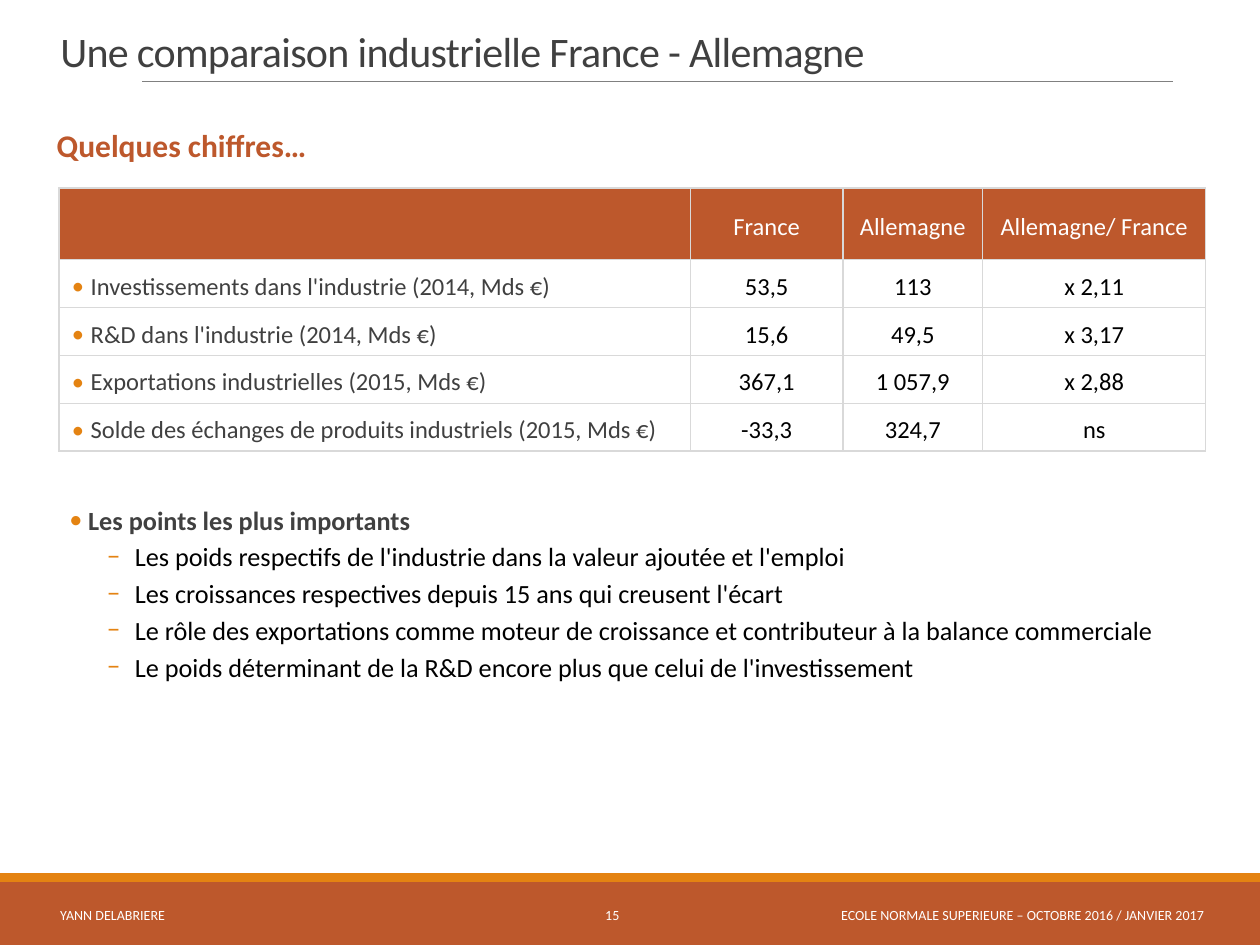
from dataclasses import dataclass

from lxml import etree
from pptx import Presentation
from pptx.dml.color import RGBColor
from pptx.enum.shapes import MSO_CONNECTOR, MSO_SHAPE
from pptx.enum.text import MSO_ANCHOR, PP_ALIGN
from pptx.oxml.ns import qn
from pptx.util import Inches, Pt

LEFT, CENTER, RIGHT = PP_ALIGN.LEFT, PP_ALIGN.CENTER, PP_ALIGN.RIGHT
TOP, MIDDLE, BOTTOM = MSO_ANCHOR.TOP, MSO_ANCHOR.MIDDLE, MSO_ANCHOR.BOTTOM
RUST, ORANGE, GREY, DARK = "BD582C", "E48312", "D9D9D9", "404040"
WHITE, BLACK, RULE = "FFFFFF", "000000", "808080"


@dataclass
class Line:
    text: str
    size: float
    color: str
    bold: bool = False
    align: PP_ALIGN = LEFT
    bullet: str = ""
    margin: float = 0
    hanging: float = 0
    before: float = 0
    spacing: float = 1.0


@dataclass
class Band:
    top: float
    height: float
    color: str


@dataclass
class Footer:
    text: str
    left: float
    width: float
    align: PP_ALIGN


def rgb(color: str) -> RGBColor:
    return RGBColor.from_string(color)


def write_line(para, line: Line) -> None:
    para.text = line.text
    para.alignment = line.align
    para.line_spacing = line.spacing
    para.space_before = Pt(line.before)
    properties = para._p.get_or_add_pPr()
    properties.set("marL", str(Inches(line.margin)))
    properties.set("indent", str(-Inches(line.hanging)))
    if line.bullet:
        bullet_color = etree.SubElement(properties, qn("a:buClr"))
        etree.SubElement(bullet_color, qn("a:srgbClr"), val=ORANGE)
        etree.SubElement(properties, qn("a:buFont"), typeface="Calibri")
        etree.SubElement(properties, qn("a:buChar"), char=line.bullet)
    for span in para.runs:
        span.font.name = "Calibri"
        span.font.size = Pt(line.size)
        span.font.bold = line.bold
        span.font.color.rgb = rgb(line.color)


def add_text(page, left: float, top: float, width: float, height: float,
             lines: list[Line], anchor: MSO_ANCHOR = TOP, inset: float = 0.1):
    box = page.shapes.add_textbox(Inches(left), Inches(top), Inches(width), Inches(height))
    frame = box.text_frame
    frame.word_wrap = True
    frame.vertical_anchor = anchor
    frame.margin_left = frame.margin_right = Inches(inset)
    for index, line in enumerate(lines):
        write_line(frame.add_paragraph() if index else frame.paragraphs[0], line)
    return box


def add_band(page, band: Band) -> None:
    shape = page.shapes.add_shape(MSO_SHAPE.RECTANGLE, 0, Inches(band.top),
                                  Inches(10), Inches(band.height))
    shape.shadow.inherit = False
    shape.fill.solid()
    shape.fill.fore_color.rgb = rgb(band.color)
    shape.line.fill.background()


def add_rule(page, left: float, right: float, top: float) -> None:
    rule = page.shapes.add_connector(MSO_CONNECTOR.STRAIGHT, Inches(left), Inches(top),
                                     Inches(right), Inches(top))
    rule.line.color.rgb = rgb(RULE)
    rule.line.width = Pt(0.5)
    etree.SubElement(rule._element.spPr, qn("a:effectLst"))


def style_cell(cell, fill: str) -> None:
    cell.vertical_anchor = MIDDLE
    properties = cell._tc.get_or_add_tcPr()
    for side in ("lnL", "lnR", "lnT", "lnB"):
        border = etree.SubElement(properties, qn(f"a:{side}"), w=str(Pt(1)))
        solid = etree.SubElement(border, qn("a:solidFill"))
        etree.SubElement(solid, qn("a:srgbClr"), val=GREY)
    cell.fill.solid()
    cell.fill.fore_color.rgb = rgb(fill)


def add_figures(page, rows: list[tuple[str, ...]], widths: list[float],
                heights: list[float]) -> None:
    table = page.shapes.add_table(len(rows), len(widths), Inches(0.47), Inches(1.49),
                                  Inches(sum(widths)), Inches(sum(heights))).table
    for column, width in zip(table.columns, widths):
        column.width = Inches(width)
    for row, height in zip(table.rows, heights):
        row.height = Inches(height)
    for row_index, texts in enumerate(rows):
        header = row_index == 0
        for column_index, text in enumerate(texts):
            cell = table.cell(row_index, column_index)
            style_cell(cell, RUST if header else WHITE)
            if column_index == 0 and not header:
                line = Line(text, 14, DARK, bullet="•", margin=0.15, hanging=0.15, spacing=1.2)
            else:
                line = Line(text, 14, WHITE if header else BLACK, align=CENTER, spacing=1.2)
            write_line(cell.text_frame.paragraphs[0], line)


BANDS = [Band(7, 0.5, RUST), Band(6.93, 0.07, ORANGE)]
FOOTERS = [
    Footer("ECOLE NORMALE SUPERIEURE – OCTOBRE 2016 / JANVIER 2017", 6.37, 3.29, RIGHT),
    Footer("YANN DELABRIERE", 0.38, 2.76, LEFT),
    Footer("15", 4.32, 1.08, CENTER),
]
FIGURES = [
    ("", "France", "Allemagne", "Allemagne/ France"),
    ("Investissements dans l'industrie (2014, Mds €)", "53,5", "113", "x 2,11"),
    ("R&D dans l'industrie (2014, Mds €)", "15,6", "49,5", "x 3,17"),
    ("Exportations industrielles (2015, Mds €)", "367,1", "1 057,9", "x 2,88"),
    ("Solde des échanges de produits industriels (2015, Mds €)", "-33,3", "324,7", "ns"),
]
POINTS = [
    "Les poids respectifs de l'industrie dans la valeur ajoutée et l'emploi",
    "Les croissances respectives depuis 15 ans qui creusent l'écart",
    "Le rôle des exportations comme moteur de croissance et contributeur à la balance commerciale",
    "Le poids déterminant de la R&D encore plus que celui de l'investissement",
]


def main() -> None:
    deck = Presentation()
    deck.slide_width, deck.slide_height = Inches(10), Inches(7.5)
    page = deck.slides.add_slide(deck.slide_layouts[6])

    # Footer bands and title rule
    for band in BANDS:
        add_band(page, band)
    add_rule(page, 1.13, 9.31, 0.65)

    # Title, slightly tightened
    title = add_text(page, 0.38, 0.01, 9.29, 0.64, [
        Line("Une comparaison industrielle France - Allemagne", 24, DARK, spacing=0.85)], BOTTOM)
    title.text_frame.paragraphs[0].runs[0].font._element.set("spc", "-40")

    # Footer texts
    for footer in FOOTERS:
        add_text(page, footer.left, 7.06, footer.width, 0.4,
                 [Line(footer.text, 8, WHITE, align=footer.align)], MIDDLE)

    # Heading and table of figures
    add_text(page, 0.38, 0.95, 9.19, 0.44,
             [Line("Quelques chiffres…", 18, RUST, bold=True, margin=0.07)], inset=0)
    add_figures(page, FIGURES, [5.01, 1.21, 1.11, 1.77], [0.57] + [0.38] * 4)

    # Key points
    key_points = [Line("Les points les plus importants", 15, DARK, bold=True,
                       bullet="•", margin=0.32, hanging=0.15)]
    key_points += [Line(point, 15, BLACK, bullet="−", margin=0.69, hanging=0.22, before=3)
                   for point in POINTS]
    add_text(page, 0.38, 3.95, 9.19, 1.58, key_points, inset=0)

    deck.save("out.pptx")


if __name__ == "__main__":
    main()
